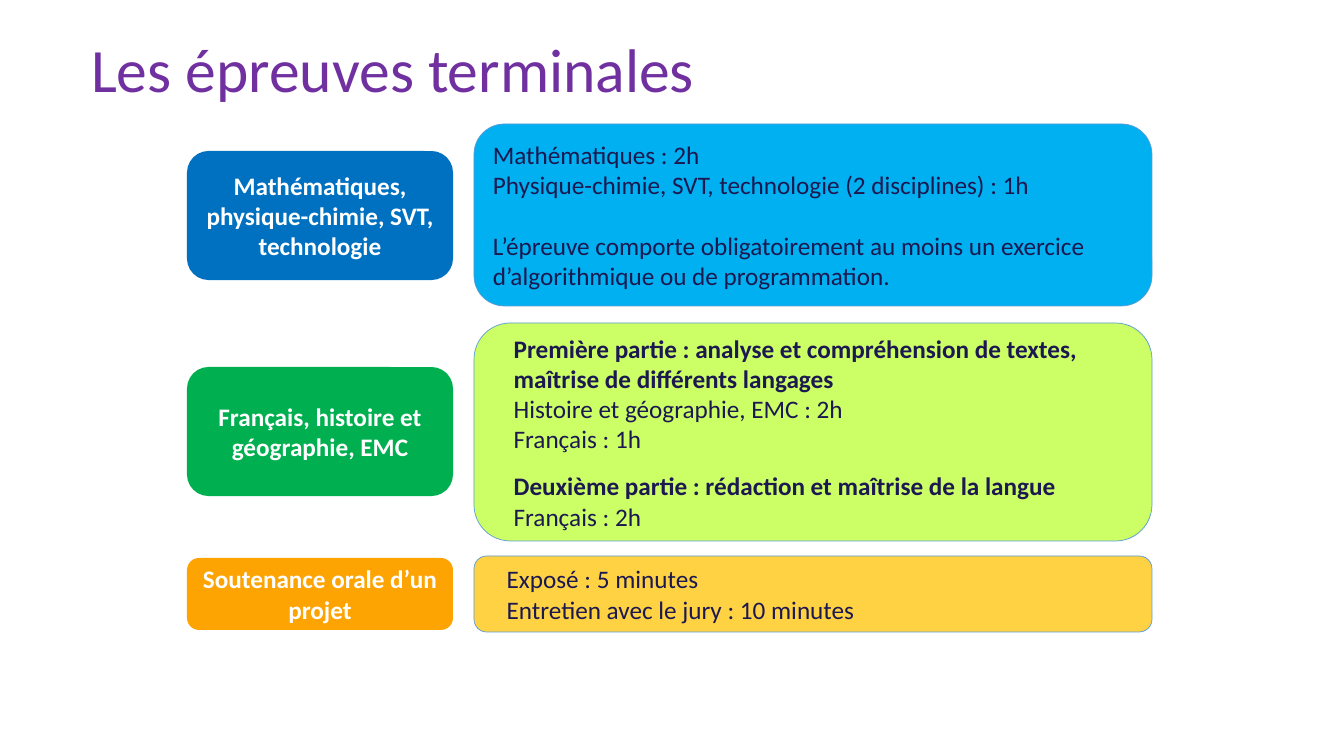
from pptx import Presentation
from pptx import util as u
from pptx.dml.color import RGBColor
from pptx.enum import shapes, text

EMU_PER_PX = 914400 / 100.8
COLORS = {
    "title": "7030A0", "white": "FFFFFF", "ink": "1C1850", "outline": "5B9BD5",
    "blue": "0070C0", "sky": "00B0F0", "green": "00B050", "lime": "CCFF66",
    "orange": "FDA403", "yellow": "FFD243",
}
LABEL_LEFT, LABEL_WIDTH = 187, 266
DETAIL_LEFT, DETAIL_WIDTH = 474, 678


def px(length):
    return u.Emu(round(length * EMU_PER_PX))


def add_box(left, top, width, height, fill, paragraphs, color, align, indent=0):
    """Rounded box; each paragraph is (text, bold, points before)."""
    shape = slide.shapes.add_shape(
        shapes.MSO_SHAPE.ROUNDED_RECTANGLE, px(left), px(top), px(width), px(height))
    shape.shadow.inherit = False
    shape.fill.solid()
    shape.fill.fore_color.rgb = RGBColor.from_string(COLORS[fill])
    frame = shape.text_frame
    frame.word_wrap = True
    frame.vertical_anchor = text.MSO_ANCHOR.MIDDLE
    frame.margin_left = px(10 + indent)
    for index, (wording, bold, before) in enumerate(paragraphs):
        paragraph = frame.add_paragraph() if index else frame.paragraphs[0]
        paragraph.text = wording
        paragraph.alignment = align
        paragraph.space_before = u.Pt(before)
        paragraph.font.name = "Calibri"
        paragraph.font.size = u.Pt(18)
        paragraph.font.bold = bold
        paragraph.font.color.rgb = RGBColor.from_string(COLORS[color])
    return shape


presentation = Presentation()
presentation.slide_width, presentation.slide_height = px(1344), px(756)
slide = presentation.slides.add_slide(presentation.slide_layouts[5])

# Title
title = slide.shapes.title
title.left, title.top, title.width, title.height = px(81), px(0), px(1159), px(146)
title.text_frame.text = "Les épreuves terminales"
title.text_frame.vertical_anchor = text.MSO_ANCHOR.MIDDLE
paragraph = title.text_frame.paragraphs[0]
paragraph.alignment = text.PP_ALIGN.LEFT
paragraph.line_spacing = 0.9
paragraph.font.name = "Calibri"
paragraph.font.size = u.Pt(44)
paragraph.font.color.rgb = RGBColor.from_string(COLORS["title"])

# Exams: label, (top, height, fill) of label and detail, detail indent, detail text
exams = [
    ("Mathématiques, physique-chimie, SVT, technologie",
     (151, 129, "blue"), (124, 182, "sky"), 0, [
         ("Mathématiques : 2h", False, 0),
         ("Physique-chimie, SVT, technologie (2 disciplines) : 1h", False, 0),
         ("L’épreuve comporte obligatoirement au moins un exercice "
          "d’algorithmique ou de programmation.", False, 22)]),
    ("Français, histoire et géographie, EMC",
     (367, 129, "green"), (323, 218, "lime"), 19, [
         ("Première partie : analyse et compréhension de textes, "
          "maîtrise de différents langages", True, 0),
         ("Histoire et géographie, EMC : 2h", False, 0),
         ("Français : 1h", False, 0),
         ("Deuxième partie : rédaction et maîtrise de la langue", True, 12),
         ("Français : 2h", False, 0)]),
    ("Soutenance orale d’un projet",
     (558, 72, "orange"), (556, 76, "yellow"), 19, [
         ("Exposé : 5 minutes", False, 0),
         ("Entretien avec le jury : 10 minutes", False, 0)]),
]
for label, label_box, detail_box, indent, details in exams:
    top, height, fill = label_box
    shape = add_box(LABEL_LEFT, top, LABEL_WIDTH, height, fill,
                    [(label, True, 0)], "white", text.PP_ALIGN.CENTER)
    shape.line.fill.background()

    top, height, fill = detail_box
    shape = add_box(DETAIL_LEFT, top, DETAIL_WIDTH, height, fill,
                    details, "ink", text.PP_ALIGN.LEFT, indent)
    shape.line.color.rgb = RGBColor.from_string(COLORS["outline"])
    shape.line.width = u.Pt(0.5)

presentation.save("out.pptx")
